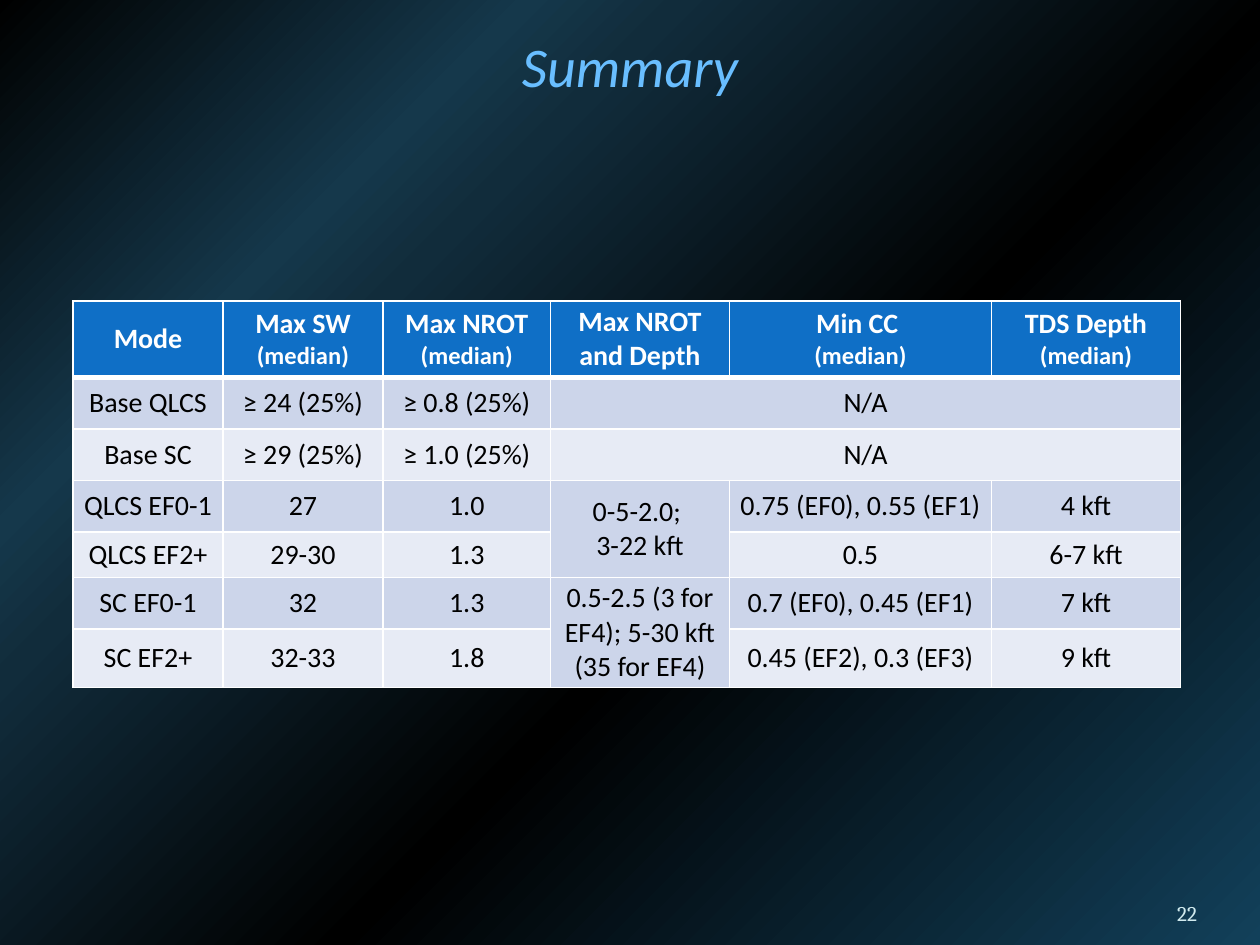
from lxml import etree
from pptx import Presentation
from pptx import util as u
from pptx.dml.color import RGBColor
from pptx.enum import text
from pptx.oxml import parse_xml

NS = "http://schemas.openxmlformats.org/drawingml/2006/main"


def write(p, content, size=16, font="Calibri", color="000000", bold=False, italic=False, align="CENTER"):
    p.alignment = getattr(text.PP_ALIGN, align)
    r = p.add_run()
    r.text = content
    r.font.size = u.Pt(size)
    r.font.name = font
    r.font.bold = bold
    r.font.italic = italic
    r.font.color.rgb = RGBColor.from_string(color)


def border(cell, side, width, color):
    cell._tc.get_or_add_tcPr().append(parse_xml(
        f'<a:ln{side} xmlns:a="{NS}" w="{u.Pt(width)}"><a:solidFill>'
        f'<a:srgbClr val="{color}"/></a:solidFill></a:ln{side}>'))


prs = Presentation()
prs.slide_width, prs.slide_height = u.Inches(10), u.Inches(7.5)
s = prs.slides.add_slide(prs.slide_layouts[5])

fill = s.background.fill
fill.gradient()
fill.gradient_angle = 315
stops = s.background._cSld.find(f".//{{{NS}}}gsLst")
for gs in list(stops):
    stops.remove(gs)
for pos, color in [(0, "000000"), (24, "15384B"), (31, "112C3B"), (58, "000000"), (100, "12405A")]:
    gs = etree.SubElement(stops, f"{{{NS}}}gs", pos=str(pos * 1000))
    etree.SubElement(gs, f"{{{NS}}}srgbClr", val=color)

title = s.shapes.title
title.left, title.top, title.width, title.height = [u.Inches(v) for v in (0, 0.2, 10, 0.64)]
write(title.text_frame.paragraphs[0], "Summary", size=32, color="69BEFF", italic=True)

headers = [("Mode", ""), ("Max SW ", "(median)"), ("Max NROT ", "(median)"),
           ("Max NROT and Depth", ""), ("Min CC ", "\n(median)"), ("TDS Depth ", "(median)")]
rows = [
    ["Base QLCS", "≥ 24 (25%)", "≥ 0.8 (25%)", "N/A", "", ""],
    ["Base SC", "≥ 29 (25%)", "≥ 1.0 (25%)", "N/A", "", ""],
    ["QLCS EF0-1", "27", "1.0", "0-5-2.0; \n3-22 kft", "0.75 (EF0), 0.55 (EF1)", "4 kft"],
    ["QLCS EF2+", "29-30", "1.3", "", "0.5", "6-7 kft"],
    ["SC EF0-1", "32", "1.3", "0.5-2.5 (3 for EF4); 5-30 kft (35 for EF4)", "0.7 (EF0), 0.45 (EF1)", "7 kft"],
    ["SC EF2+", "32-33", "1.8", "", "0.45 (EF2), 0.3 (EF3)", "9 kft"],
]
widths = [1.19, 1.27, 1.33, 1.42, 2.08, 1.5]
heights = [0.41, 0.41, 0.41, 0.41, 0.36, 0.41, 0.37]
tbl = s.shapes.add_table(len(heights), len(widths), u.Inches(0.58), u.Inches(2.39),
                         u.Inches(sum(widths)), u.Inches(sum(heights))).table
for col, w in zip(tbl.columns, widths):
    col.width = u.Inches(w)
for row, h in zip(tbl.rows, heights):
    row.height = u.Inches(h)

for i in range(len(heights)):
    for j in range(len(widths)):
        cell = tbl.cell(i, j)
        cell.margin_left = cell.margin_right = cell.margin_top = cell.margin_bottom = u.Inches(0.03)
        cell.vertical_anchor = text.MSO_ANCHOR.MIDDLE
        for side in "LRTB":
            thick = (i, side) in [(0, "B"), (1, "T")]
            border(cell, side, 3 if thick else 1, "FFFFFF")
        cell.fill.solid()
        cell.fill.fore_color.rgb = RGBColor.from_string("0F6FC6" if i == 0 else "CCD5EA" if i % 2 else "E7EBF5")
        tf = cell.text_frame
        p = tf.paragraphs[0]
        if i == 0:
            name, note = headers[j]
            write(p, name, color="FFFFFF", bold=True)
            if note.startswith("\n"):
                p = tf.add_paragraph()
            if note:
                write(p, note.strip(), size=14, color="FFFFFF", bold=True)
        elif rows[i - 1][j]:
            lines = rows[i - 1][j].split("\n")
            write(p, lines[0])
            for line in lines[1:]:
                p.space_before = u.Pt(6)
                write(tf.add_paragraph(), line)

for first, last in [((1, 3), (1, 5)), ((2, 3), (2, 5)), ((3, 3), (4, 3)), ((5, 3), (6, 3))]:
    tbl.cell(*first).merge(tbl.cell(*last))

number = s.shapes.add_textbox(u.Inches(8.67), u.Inches(6.95), u.Inches(0.83), u.Inches(0.4))
tf = number.text_frame
tf.word_wrap = True
tf.vertical_anchor = text.MSO_ANCHOR.BOTTOM
tf.margin_left = tf.margin_right = tf.margin_top = tf.margin_bottom = 0
write(tf.paragraphs[0], "22", size=12, font="Cambria", color="D1EAEE", align="RIGHT")

prs.save("out.pptx")
